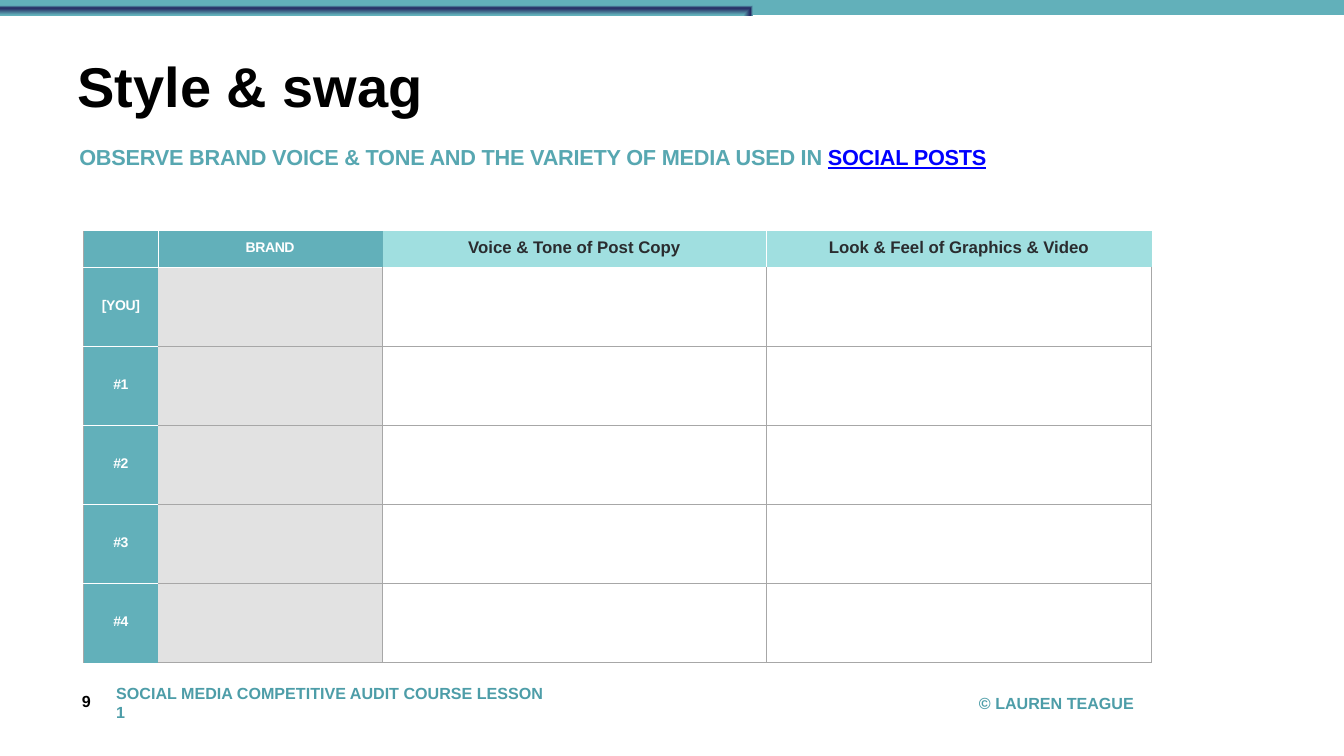
from dataclasses import dataclass
from typing import Optional

from lxml.etree import SubElement
from pptx import Presentation
from pptx.dml.color import RGBColor
from pptx.enum.shapes import MSO_SHAPE as Shape
from pptx.enum.text import MSO_ANCHOR as Anchor, PP_ALIGN as Align
from pptx.oxml import parse_xml
from pptx.oxml.ns import nsdecls, qn
from pptx.util import Pt

TEAL, MINT, GRAY, WHITE = "62B0BA", "A0DFE0", "A7A7A7", "FFFFFF"
FOOTER_COLOR = "4D9DA8"


@dataclass
class Run:
    text: str
    size: float
    color: str
    spacing: float = 0
    underline: Optional[bool] = None


@dataclass
class Label:
    left: float
    top: float
    width: float
    height: float
    runs: list[Run]
    line_spacing: float = 1.0
    margin: float = 6
    anchor: Anchor = Anchor.TOP


LABELS = [
    Label(160, 985, 641.5, 37.5, [Run("SOCIAL MEDIA COMPETITIVE AUDIT COURSE LESSON 1", 23, FOOTER_COLOR)],
          anchor=Anchor.MIDDLE),
    Label(1392.5, 985, 240, 37.5, [Run("© LAUREN TEAGUE", 23, FOOTER_COLOR)], anchor=Anchor.MIDDLE),
    Label(107.3, 88, 1745, 119.5, [Run("Style & swag", 80, "000000")], 0.8, 3.6),
    Label(107.3, 196, 1745, 63.4, [
        Run("OBSERVE BRAND VOICE & TONE AND THE VARIETY OF MEDIA USED IN ", 31, "57A7B1", -0.3),
        Run("SOCIAL POSTS", 31, "0000FF", -0.3, True),
    ], 1.1),
    Label(111, 982, 41, 37.5, [Run("9", 23, "000000")]),
]

HEADERS = [
    None,
    Run("BRAND", 20, WHITE, -0.6),
    Run("Voice & Tone of Post Copy", 24, "2A2C2F"),
    Run("Look & Feel of Graphics & Video", 24, "2A2C2F"),
]
HEADER_FILLS = [TEAL, TEAL, MINT, MINT]
HEADER_EDGES = [GRAY, WHITE, "65B0B9", WHITE, "A2DFDF"]
BODY_EDGES = [GRAY, None, GRAY, GRAY, GRAY]
ROW_NAMES = ["[YOU]", "#1", "#2", "#3", "#4"]
COLUMN_WIDTHS = [106.5, 319.7, 549.4, 549.4]
HEADER_HEIGHT, ROW_HEIGHT = 51.8, 113


def rgb(color: str) -> RGBColor:
    return RGBColor.from_string(color)


def apply(target, values: dict) -> None:
    for name, value in values.items():
        setattr(target, name, value)


def add_run(paragraph, item: Run) -> None:
    run = paragraph.add_run()
    run.text = item.text
    apply(run.font, {"name": "Arial", "size": Pt(item.size), "bold": True, "underline": item.underline})
    run.font.color.rgb = rgb(item.color)
    if item.spacing:
        run._r.get_or_add_rPr().set("spc", str(round(item.spacing * 100)))


def add_label(slide, label: Label) -> None:
    box = slide.shapes.add_textbox(Pt(label.left), Pt(label.top), Pt(label.width), Pt(label.height))
    frame = box.text_frame
    margins = {f"margin_{side}": Pt(label.margin) for side in ("left", "right", "top", "bottom")}
    apply(frame, {"word_wrap": True, "vertical_anchor": label.anchor, **margins})
    paragraph = frame.paragraphs[0]
    paragraph.line_spacing = label.line_spacing
    for item in label.runs:
        add_run(paragraph, item)


def add_banner(slide) -> None:
    banner = slide.shapes.add_shape(Shape.RECTANGLE, Pt(-6.5), Pt(-5.8), Pt(1932.5), Pt(27.4))
    banner.shadow.inherit = False
    banner.line.fill.background()
    stops = [(0, TEAL), (62, "2B386B"), (74, "252A62"), (100, TEAL)]
    stop_xml = "".join(
        f'<a:gs pos="{position * 1000}"><a:srgbClr val="{color}"/></a:gs>' for position, color in stops
    )
    gradient = parse_xml(
        f'<a:gradFill {nsdecls("a")} rotWithShape="1"><a:gsLst>{stop_xml}</a:gsLst>'
        '<a:path path="rect"><a:fillToRect l="6000" t="99000" r="94000" b="1000"/></a:path></a:gradFill>'
    )
    banner._element.spPr.find(qn("a:prstGeom")).addnext(gradient)


def set_edges(cell, edges: dict[str, Optional[str]]) -> None:
    properties = cell._tc.get_or_add_tcPr()
    for index, (side, color) in enumerate(edges.items()):
        fill = f'<a:solidFill><a:srgbClr val="{color}"/></a:solidFill>' if color else "<a:noFill/>"
        line = parse_xml(f'<a:ln{side} {nsdecls("a")} w="{Pt(1)}">{fill}</a:ln{side}>')
        properties.insert(index, line)


def fill_cell(cell, color: Optional[str], opacity: int = 100) -> None:
    if color is None:
        cell.fill.background()
        return
    cell.fill.solid()
    cell.fill.fore_color.rgb = rgb(color)
    if opacity < 100:
        color_element = cell._tc.tcPr.find(".//" + qn("a:srgbClr"))
        SubElement(color_element, qn("a:alpha"), val=str(opacity * 1000))


def write_cell(cell, item: Run) -> None:
    margins = {f"margin_{side}": Pt(4.5) for side in ("left", "right", "top", "bottom")}
    apply(cell, {"vertical_anchor": Anchor.MIDDLE, **margins})
    paragraph = cell.text_frame.paragraphs[0]
    apply(paragraph, {"alignment": Align.CENTER, "line_spacing": 0.8})
    add_run(paragraph, item)


def horizontal_edge(line: int, column: int) -> Optional[str]:
    if line == 0 or (line == len(ROW_NAMES) + 1 and column == 0):
        return None
    return WHITE if line == 1 or column == 0 else GRAY


def add_audit_table(slide) -> None:
    rows, columns = len(ROW_NAMES) + 1, len(COLUMN_WIDTHS)
    height = HEADER_HEIGHT + ROW_HEIGHT * len(ROW_NAMES)
    frame = slide.shapes.add_table(rows, columns, Pt(119.5), Pt(330), Pt(sum(COLUMN_WIDTHS)), Pt(height))
    table = frame.table
    apply(table, {"first_row": False, "horz_banding": False})
    for column, width in enumerate(COLUMN_WIDTHS):
        table.columns[column].width = Pt(width)
    for row in range(rows):
        table.rows[row].height = Pt(ROW_HEIGHT if row else HEADER_HEIGHT)
        vertical = BODY_EDGES if row else HEADER_EDGES
        for column in range(columns):
            cell = table.cell(row, column)
            if row == 0:
                fill_cell(cell, HEADER_FILLS[column])
                item = HEADERS[column]
            else:
                fill_cell(cell, [TEAL, GRAY, None, None][column], 32 if column == 1 else 100)
                item = Run(ROW_NAMES[row - 1], 20, WHITE, -0.6) if column == 0 else None
            if item:
                write_cell(cell, item)
            set_edges(cell, {
                "L": vertical[column],
                "R": vertical[column + 1],
                "T": horizontal_edge(row, column),
                "B": horizontal_edge(row + 1, column),
            })


def main() -> None:
    presentation = Presentation()
    apply(presentation, {"slide_width": Pt(1920), "slide_height": Pt(1080)})
    slide = presentation.slides.add_slide(presentation.slide_layouts[6])
    add_banner(slide)
    for label in LABELS:
        add_label(slide, label)
    add_audit_table(slide)
    presentation.save("out.pptx")


if __name__ == "__main__":
    main()
